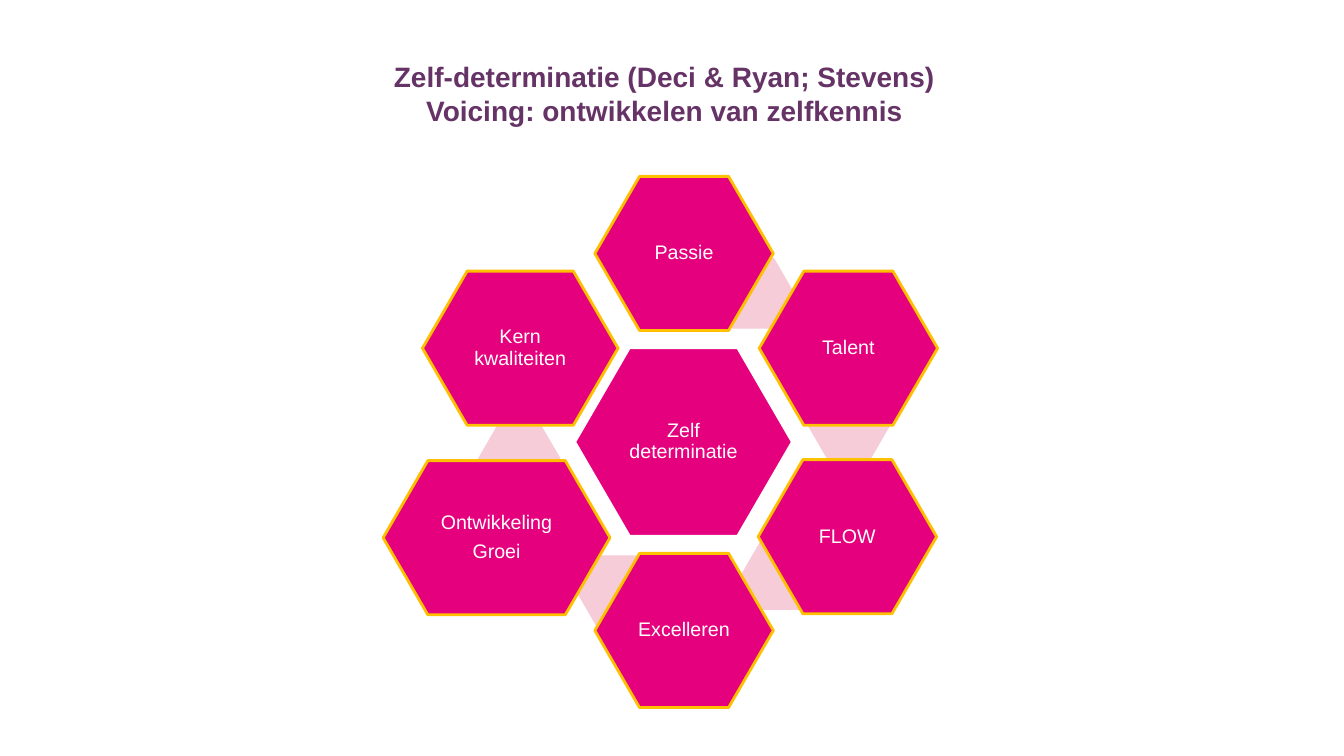
from pptx import Presentation
from pptx.dml.color import RGBColor
from pptx.enum.shapes import MSO_SHAPE as Shape
from pptx.enum.text import MSO_ANCHOR as Anchor, PP_ALIGN as Align
from pptx.util import Inches, Pt

PINK = RGBColor(0xE5, 0x00, 0x7D)
PALE = RGBColor(0xF5, 0xCC, 0xD7)
GOLD = RGBColor(0xFF, 0xC0, 0x00)
WHITE = RGBColor(0xFF, 0xFF, 0xFF)
PURPLE = RGBColor(0x66, 0x33, 0x66)


def write(frame, text, size=14, color=WHITE, bold=False, spacing=0.9, after=5, inset=0.02, right=0.02):
    frame.word_wrap = True
    frame.vertical_anchor = Anchor.MIDDLE
    frame.margin_left = frame.margin_top = frame.margin_bottom = Inches(inset)
    frame.margin_right = Inches(right)
    frame.text = text
    for para in frame.paragraphs:
        para.alignment = Align.CENTER
        para.line_spacing = spacing
        para.space_before = Pt(0)
        para.space_after = Pt(after)
        for run in para.runs:
            run.font.name = "Arial"
            run.font.size = Pt(size)
            run.font.bold = bold
            run.font.color.rgb = color


def hexagon(left, top, width, height, fill, edge=None):
    shape = slide.shapes.add_shape(Shape.HEXAGON, Inches(left), Inches(top), Inches(width), Inches(height))
    shape.adjustments[0] = 0.29
    shape.shadow.inherit = False
    shape.fill.solid()
    shape.fill.fore_color.rgb = fill
    if edge is None:
        shape.line.fill.background()
    else:
        shape.line.color.rgb = edge
        shape.line.width = Pt(2)
    return shape


deck = Presentation()
deck.slide_width, deck.slide_height = Inches(13.33), Inches(7.5)
slide = deck.slides.add_slide(deck.slide_layouts[5])

title = slide.shapes.title
title.left, title.top = Inches(0.89), Inches(0.3)
title.width, title.height = Inches(11.56), Inches(1.25)
write(title.text_frame, "Zelf-determinatie (Deci & Ryan; Stevens)\vVoicing: ontwikkelen van zelfkennis",
      size=20, color=PURPLE, bold=True, spacing=1, after=0, inset=0.05, right=0.21)

for left, top in [(7.06, 2.56), (8.01, 3.87), (7.35, 5.35), (5.71, 5.51), (4.74, 4.2)]:
    hexagon(left, top, 0.82, 0.7, PALE)

core = hexagon(5.7, 3.45, 2.16, 1.87, PINK, WHITE)
write(core.text_frame, "Zelf determinatie")

ring = [
    ("Passie", 5.9, 1.75, 1.77),
    ("Talent", 7.53, 2.69, 1.77),
    ("FLOW", 7.52, 4.56, 1.77),
    ("Excelleren", 5.9, 5.49, 1.77),
    ("Ontwikkeling\nGroei", 3.8, 4.57, 2.25),
    ("Kern kwaliteiten", 4.19, 2.69, 1.94),
]
for label, left, top, width in ring:
    cell = hexagon(left, top, width, 1.53, PINK, GOLD)
    write(cell.text_frame, label)

deck.save("out.pptx")
